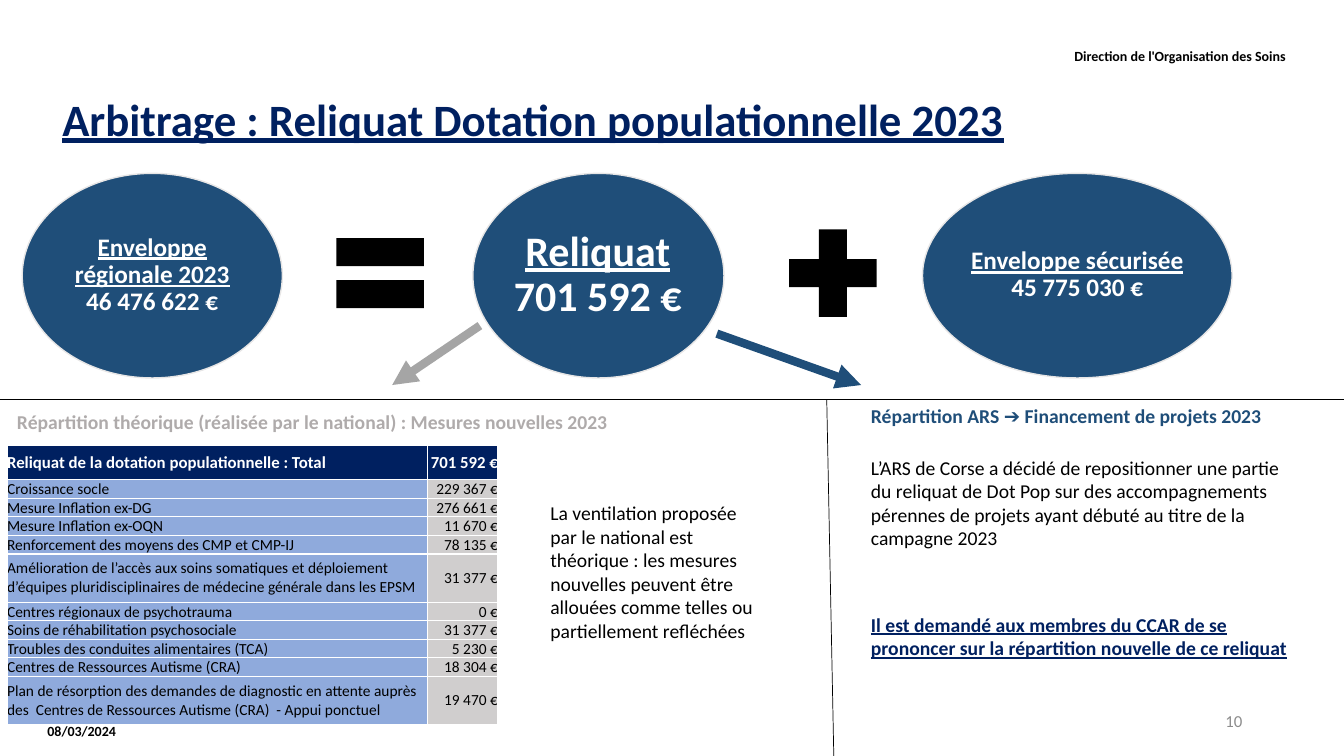
from lxml.etree import SubElement
from pptx import Presentation
from pptx.dml.color import RGBColor
from pptx.enum.shapes import MSO_CONNECTOR as Link, MSO_SHAPE as Shape
from pptx.enum.text import MSO_ANCHOR as Anchor, PP_ALIGN as Align
from pptx.oxml.ns import qn
from pptx.util import Inches, Pt

HUES = {
    "navy": "002060", "blue": "1F4E79", "black": "000000", "white": "FFFFFF",
    "rim": "E7E6E6", "mute": "AFABAB", "gray": "A5A5A5", "page": "8C8C8C",
    "label": "8FAADC", "sum": "D0CECE",
}
FONT = "Calibri"
L, C, R = Align.LEFT, Align.CENTER, Align.RIGHT

# Frame texts: text, box, size, colour, bold, underline, align, inset or None
FRAME = [
    ("10", (9.42, 6.95, 3, 0.4), 12, "page", False, False, R, None),
    ("08/03/2024", (0.47, 7, 1.76, 0.5), 10, "black", True, False, L, 0),
    ("Direction de l'Organisation des Soins", (4.18, 0.29, 8.57, 0.52),
     10, "black", True, False, R, 0),
    ("Arbitrage : Reliquat Dotation populationnelle 2023",
     (0.52, 0.81, 12.28, 0.79), 32, "navy", True, True, L, None),
]

# Body texts: text, box, colour, bold, underline
BODY = [
    ("Répartition théorique (réalisée par le national) : Mesures nouvelles 2023",
     (0.07, 4.02, 6.08, 0.34), "mute", True, False),
    ("Répartition ARS ➔ Financement de projets 2023",
     (8.54, 3.96, 4.37, 0.34), "blue", True, False),
    ("La ventilation proposée par le national est théorique : les mesures "
     "nouvelles peuvent être allouées comme telles ou partiellement refléchées",
     (5.36, 4.92, 2.25, 1.51), "black", False, False),
    ("L’ARS de Corse a décidé de repositionner une partie du reliquat de Dot Pop "
     "sur des accompagnements pérennes de projets ayant débuté au titre de la "
     "campagne 2023", (8.54, 4.47, 4.37, 1.04), "black", False, False),
    ("Il est demandé aux membres du CCAR de se prononcer sur la répartition "
     "nouvelle de ce reliquat", (8.54, 6.03, 4.37, 0.57), "navy", True, True),
]

# Ovals: name, amount, left, width, text left, text width, size
OVALS = [
    ("Enveloppe régionale 2023", "46 476 622 €", 0.22, 2.58, 0.6, 1.82, 18),
    ("Reliquat", "701 592 €", 4.69, 2.49, 5.05, 1.76, 30),
    ("Enveloppe sécurisée", "45 775 030 €", 9.15, 3.07, 9.6, 2.17, 18),
]
SIGNS = [(Shape.MATH_EQUAL, 3.18), (Shape.MATH_PLUS, 7.67)]

# Lines: from, to, colour, width, arrow
LINES = [
    ((4.76, 3.23), (3.89, 3.82), "gray", 6, True),
    ((7.11, 3.31), (8.54, 3.82), "blue", 6, True),
    ((0, 3.96), (13.33, 3.96), "black", 0.5, False),
    ((8.2, 3.96), (8.27, 7.5), "black", 0.5, False),
]

# Table rows: measure, amount
ROWS = [
    ("Reliquat de la dotation populationnelle : Total", "701 592 €"),
    ("Croissance socle", "229 367 €"),
    ("Mesure Inflation ex-DG", "276 661 €"),
    ("Mesure Inflation ex-OQN", "11 670 €"),
    ("Renforcement des moyens des CMP et CMP-IJ", "78 135 €"),
    ("Amélioration de l’accès aux soins somatiques et déploiement d’équipes "
     "pluridisciplinaires de médecine générale dans les EPSM", "31 377 €"),
    ("Centres régionaux de psychotrauma", "0 €"),
    ("Soins de réhabilitation psychosociale", "31 377 €"),
    ("Troubles des conduites alimentaires (TCA)", "5 230 €"),
    ("Centres de Ressources Autisme (CRA)", "18 304 €"),
    ("Plan de résorption des demandes de diagnostic en attente auprès des  "
     "Centres de Ressources Autisme (CRA)  - Appui ponctuel", "19 470 €"),
]
COLS = (4.17, 0.7)
HEAD, TALL, LOW = 0.34, 0.48, 0.16


def rgb(hue):
    return RGBColor.from_string(HUES[hue])


def box(spot):
    return [Inches(n) for n in spot]


def style(para, size, hue, bold=False, under=False, align=L):
    para.alignment = align
    for run in para.runs:
        font = run.font
        font.name, font.size = FONT, Pt(size)
        font.bold, font.underline = bold, under
        font.color.rgb = rgb(hue)


def inset(part, gap):
    part.margin_left = part.margin_right = Inches(gap)
    part.margin_top = part.margin_bottom = Inches(gap)


def write(text, spot, size, hue, bold, under, align=L, gap=None,
          anchor=Anchor.MIDDLE):
    frame = slide.shapes.add_textbox(*box(spot)).text_frame
    frame.word_wrap = True
    frame.vertical_anchor = anchor
    if gap is not None:
        inset(frame, gap)
    frame.text = text
    para = frame.paragraphs[0]
    style(para, size, hue, bold, under, align)
    return para


def draw(kind, spot, hue):
    shape = slide.shapes.add_shape(kind, *box(spot))
    shape.shadow.inherit = False
    shape.fill.solid()
    shape.fill.fore_color.rgb = rgb(hue)
    shape.line.fill.background()
    return shape


def edge(cell):
    props = cell._tc.get_or_add_tcPr()
    for n, side in enumerate(("lnL", "lnR", "lnT", "lnB")):
        line = props.makeelement(qn("a:" + side), {"w": str(Pt(1))})
        fill = SubElement(line, qn("a:solidFill"))
        SubElement(fill, qn("a:srgbClr"), val=HUES["white"])
        props.insert(n, line)


deck = Presentation()
deck.slide_width, deck.slide_height = Inches(13.33), Inches(7.5)
slide = deck.slides.add_slide(deck.slide_layouts[6])

# Title, header and footer
for text, spot, size, hue, bold, under, align, gap in FRAME:
    para = write(text, spot, size, hue, bold, under, align, gap)
    if size == 32:
        para.line_spacing = 0.9

# Equation of ovals and signs
for name, amount, left, width, inner, room, size in OVALS:
    oval = draw(Shape.OVAL, (left, 1.72, width, 2.03), "blue")
    oval.line.color.rgb = rgb("rim")
    oval.line.width = Pt(1)
    para = write(f"{name}\v{amount}", (inner, 2.01, room, 1.44), size,
                 "white", True, True, C, 0.03)
    para.line_spacing = 0.9
    para.runs[-1].font.underline = False
for kind, left in SIGNS:
    draw(kind, (left, 2.12, 1.18, 1.18), "black")

# Arrows and dividers
for start, end, hue, width, arrow in LINES:
    link = slide.shapes.add_connector(Link.STRAIGHT, *box(start + end))
    link.line.color.rgb = rgb(hue)
    link.line.width = Pt(width)
    if arrow:
        SubElement(link.line._get_or_add_ln(), qn("a:tailEnd"), type="triangle")
    SubElement(link._element.spPr, qn("a:effectLst"))

# Table of measures
tall = [HEAD] + [TALL if len(name) > 60 else LOW for name, _ in ROWS[1:]]
grid = slide.shapes.add_table(
    len(ROWS), len(COLS), *box((0.07, 4.42, sum(COLS), sum(tall)))).table
for col, width in zip(grid.columns, COLS):
    col.width = Inches(width)
for r, row in enumerate(ROWS):
    grid.rows[r].height = Inches(tall[r])
    for c, text in enumerate(row):
        cell = grid.cell(r, c)
        inset(cell, 0)
        cell.vertical_anchor = Anchor.MIDDLE
        cell.fill.solid()
        cell.fill.fore_color.rgb = rgb(("label", "sum")[c] if r else "navy")
        edge(cell)
        cell.text = text
        style(cell.text_frame.paragraphs[0], 11 if r else 12,
              "black" if r else "white", r == 0, False, (L, R)[c])

# Headings and remarks
for text, spot, hue, bold, under in BODY:
    write(text, spot, 14, hue, bold, under, anchor=Anchor.TOP)

deck.save("out.pptx")
